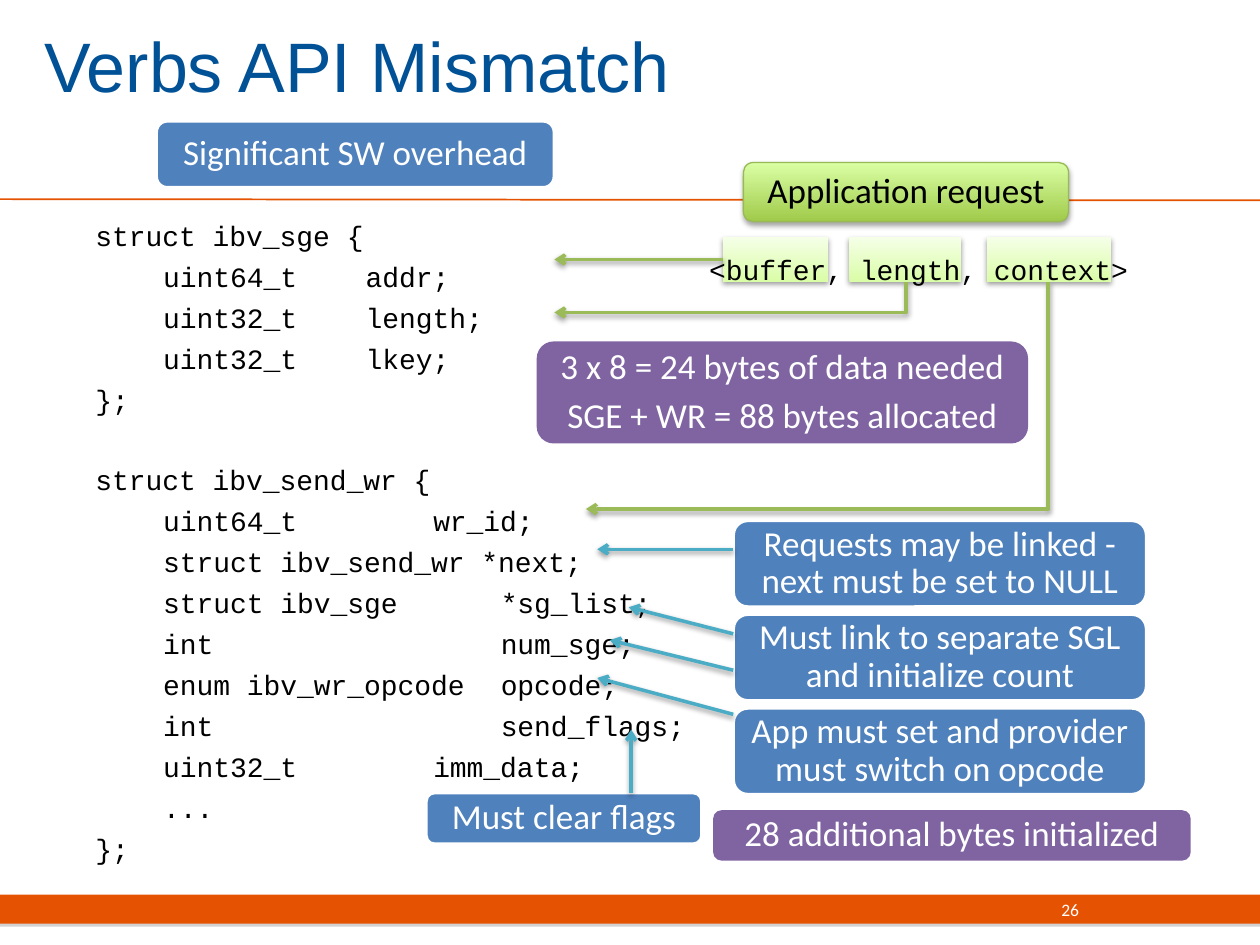
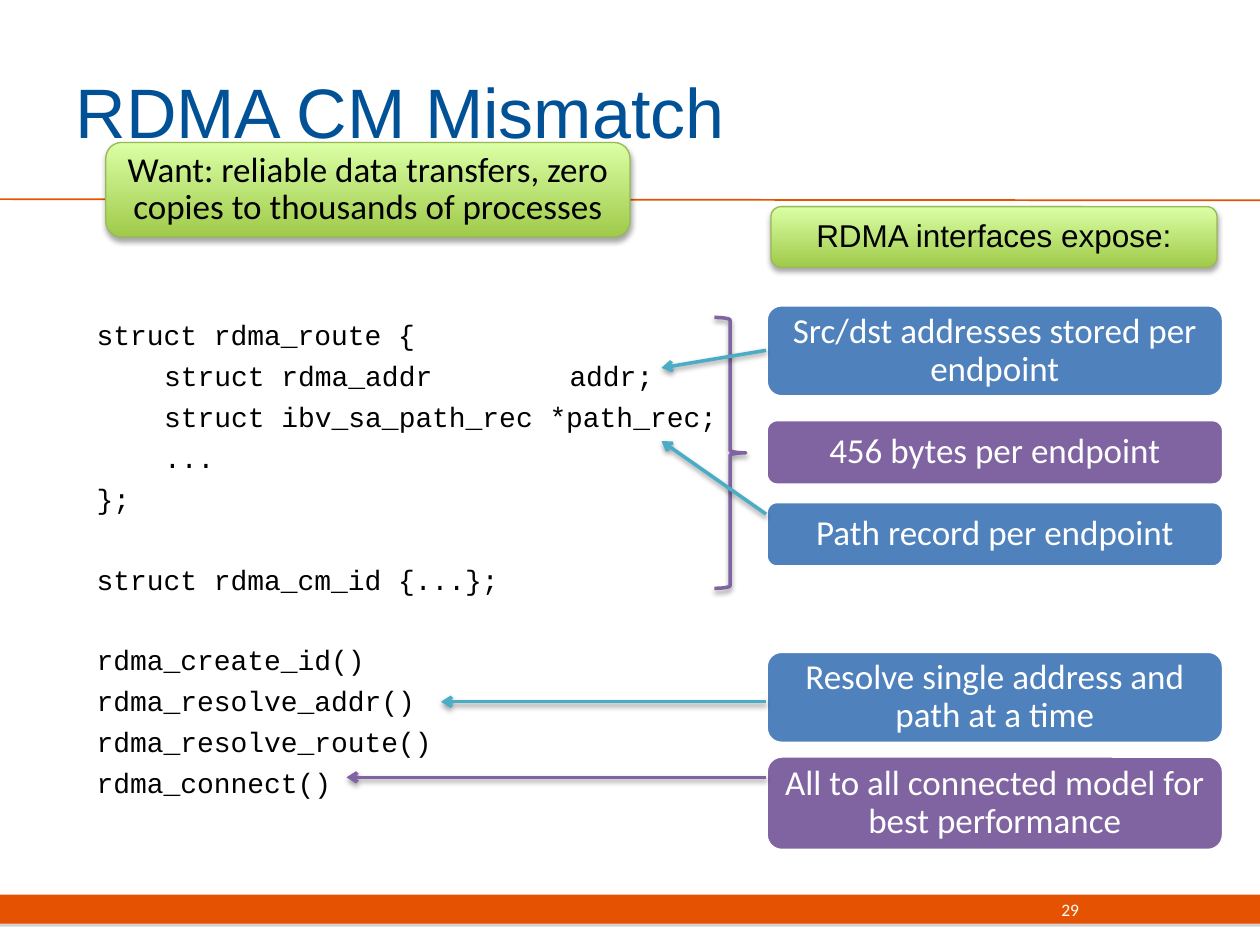
from dataclasses import dataclass
from typing import Any, Optional

from lxml import etree
from pptx import Presentation
from pptx.dml.color import RGBColor
from pptx.enum import shapes, text
from pptx.oxml import ns
from pptx.util import Pt

# Colours
ORANGE = RGBColor(0xE5, 0x53, 0x02)
TITLE_BLUE = RGBColor(0x00, 0x51, 0x95)
BLUE = RGBColor(0x4F, 0x81, 0xBD)
PURPLE = RGBColor(0x80, 0x64, 0xA2)
TEAL = RGBColor(0x4B, 0xAC, 0xC6)
GREEN = RGBColor(0x9B, 0xBB, 0x59)
GREEN_EDGE = RGBColor(0x98, 0xB9, 0x55)
GREEN_FADE = [RGBColor(0xA0, 0xCA, 0x4A), RGBColor(0xDA, 0xFF, 0xA5)]
PALE_FADE = [RGBColor(0xDA, 0xFD, 0xA7), RGBColor(0xF5, 0xFF, 0xE7)]
BLACK = RGBColor(0, 0, 0)
WHITE = RGBColor(0xFF, 0xFF, 0xFF)

WIDTH, HEIGHT = 720, 540
CODE_TAB = 38.6
CODE_GAP = 4.27
CODE_BLANK_GAP = 26.67

CODE_FONT = {"name": "Courier New", "size": Pt(16), "color": BLACK}
LABEL_FONT = {"name": "Calibri", "size": Pt(20), "color": WHITE}
DARK_FONT = LABEL_FONT | {"color": BLACK}
HEADING_FONT = {"name": "Arial", "size": Pt(18), "color": BLACK}
TITLE_FONT = {"name": "Arial", "size": Pt(40), "color": TITLE_BLUE}
NUMBER_FONT = {"name": "Calibri", "size": Pt(10), "color": WHITE}


@dataclass(frozen=True)
class Shadow:
    color: str
    alpha: int
    blur: float
    distance: float


BAND_SHADOW = Shadow("808080", 35, 0, 1.8)
BOX_SHADOW = Shadow("000000", 35, 3.1, 1.8)
LINE_SHADOW = Shadow("000000", 38, 3.1, 1.6)


@dataclass(frozen=True)
class Box:
    left: float
    top: float
    width: float
    height: float
    lines: tuple[str, ...] = ()
    fill: Any = BLUE
    edge: Optional[RGBColor] = WHITE
    edge_width: float = 2
    font: Any = None
    shadow: Optional[Shadow] = None
    preset: Any = shapes.MSO_SHAPE.ROUNDED_RECTANGLE


@dataclass(frozen=True)
class Arrow:
    start: tuple[float, float]
    end: tuple[float, float]
    color: RGBColor = TEAL
    bent: bool = False


def green_box(*place: float, lines: tuple[str, ...], font: Any = None) -> Box:
    return Box(*place, lines=lines, fill=GREEN_FADE, edge=GREEN_EDGE, edge_width=0.75,
               font=font or DARK_FONT, shadow=BOX_SHADOW)


# Formatting helpers
def apply(target: Any, values: dict) -> None:
    for name, value in values.items():
        if name == "color":
            target.color.rgb = value
        else:
            setattr(target, name, value)


def set_margins(frame: Any, horizontal: float, vertical: float) -> None:
    apply(frame, {"margin_left": Pt(horizontal), "margin_right": Pt(horizontal),
                  "margin_top": Pt(vertical), "margin_bottom": Pt(vertical)})


def cast_shadow(properties: Any, shadow: Optional[Shadow]) -> None:
    effects = properties.find(ns.qn("a:effectLst"))
    if effects is None:
        effects = etree.SubElement(properties, ns.qn("a:effectLst"))
    if shadow:
        outer = etree.SubElement(effects, ns.qn("a:outerShdw"), blurRad=str(Pt(shadow.blur)),
                                 dist=str(Pt(shadow.distance)), dir="5400000", rotWithShape="0")
        color = etree.SubElement(outer, ns.qn("a:srgbClr"), val=shadow.color)
        etree.SubElement(color, ns.qn("a:alpha"), val=str(shadow.alpha * 1000))


def write(frame: Any, lines: tuple[str, ...], font: dict, paragraph_format: dict,
          gap: float = 0) -> None:
    for index, line in enumerate(lines):
        paragraph = frame.add_paragraph() if index else frame.paragraphs[0]
        apply(paragraph, paragraph_format)
        if index:
            paragraph.space_before = Pt(gap)
        run = paragraph.add_run()
        run.text = line
        apply(run.font, font)


def add_text(slide: Any, left: float, top: float, width: float, height: float) -> Any:
    frame = slide.shapes.add_textbox(Pt(left), Pt(top), Pt(width), Pt(height)).text_frame
    frame.word_wrap = True
    set_margins(frame, 7.2, 3.6)
    return frame


# Drawing functions
def draw_box(slide: Any, box: Box) -> None:
    shape = slide.shapes.add_shape(box.preset, Pt(box.left), Pt(box.top),
                                   Pt(box.width), Pt(box.height))
    shape.shadow.inherit = False
    cast_shadow(shape._element.spPr, box.shadow)
    if isinstance(box.fill, list):
        shape.fill.gradient()
        shape.fill.gradient_angle = 90
        for stop, color in zip(shape.fill.gradient_stops, box.fill):
            stop.color.rgb = color
    elif box.fill is None:
        shape.fill.background()
    else:
        shape.fill.solid()
        shape.fill.fore_color.rgb = box.fill
    if box.edge is None:
        shape.line.fill.background()
    else:
        apply(shape.line, {"color": box.edge, "width": Pt(box.edge_width)})
    if box.lines:
        frame = shape.text_frame
        apply(frame, {"word_wrap": True, "vertical_anchor": text.MSO_ANCHOR.MIDDLE})
        set_margins(frame, 6, 6)
        write(frame, box.lines, box.font or LABEL_FONT,
              {"alignment": text.PP_ALIGN.CENTER, "line_spacing": 0.9}, gap=6.3)


def draw_line(slide: Any, start: tuple[float, float], end: tuple[float, float],
              color: RGBColor, width: float, shadow: Optional[Shadow] = None) -> Any:
    connector = slide.shapes.add_connector(shapes.MSO_CONNECTOR.STRAIGHT,
                                           *(Pt(value) for value in (*start, *end)))
    apply(connector.line, {"color": color, "width": Pt(width)})
    cast_shadow(connector._element.spPr, shadow)
    return connector


def draw_arrow(slide: Any, arrow: Arrow) -> None:
    start, end = arrow.start, arrow.end
    if arrow.bent:
        # One elbow, down then left: a frame turned a quarter about its centre
        (x1, y1), (x2, y2) = start, end
        center_x, center_y = (x1 + x2) / 2, (y1 + y2) / 2
        half_width, half_height = (y2 - y1) / 2, (x1 - x2) / 2
        start = (center_x - half_width, center_y - half_height)
        end = (center_x + half_width, center_y + half_height)
    connector = draw_line(slide, start, end, arrow.color, 2, LINE_SHADOW)
    properties = connector._element.spPr
    if arrow.bent:
        properties.find(ns.qn("a:xfrm")).set("rot", "5400000")
        properties.find(ns.qn("a:prstGeom")).set("prst", "bentConnector2")
    etree.SubElement(properties.find(ns.qn("a:ln")), ns.qn("a:tailEnd"), type="arrow")


def draw_code(slide: Any, left: float, top: float, height: float, code: str) -> None:
    """Write code lines; an empty line becomes extra space before the next."""
    frame = add_text(slide, left, top, 648, height)
    lines = code.split("\n")
    write(frame, tuple(line for line in lines if line), CODE_FONT, {}, CODE_GAP)
    after_blank = [not before for before, line in zip([" "] + lines, lines) if line]
    for paragraph, blank in zip(frame.paragraphs, after_blank):
        if blank:
            paragraph.space_before = Pt(CODE_BLANK_GAP)
        tabs = etree.SubElement(paragraph._p.get_or_add_pPr(), ns.qn("a:tabLst"))
        for stop in range(1, 9):
            etree.SubElement(tabs, ns.qn("a:tab"), pos=str(Pt(CODE_TAB * stop)), algn="l")


def start_slide(presentation: Any, title: str, place: tuple[float, ...], number: str) -> Any:
    slide = presentation.slides.add_slide(presentation.slide_layouts[5])
    # Footer band and rule
    draw_box(slide, Box(0, 511.2, WIDTH, 16.6, fill=ORANGE, edge=None, shadow=BAND_SHADOW,
                        preset=shapes.MSO_SHAPE.RECTANGLE))
    draw_line(slide, (0, 113.8), (WIDTH, 114.5), ORANGE, 1)
    # Title
    holder = slide.shapes.title
    apply(holder, dict(zip(("left", "top", "width", "height"), map(Pt, place))))
    apply(holder.text_frame, {"vertical_anchor": text.MSO_ANCHOR.MIDDLE, "word_wrap": True,
                              "auto_size": text.MSO_AUTO_SIZE.NONE})
    write(holder.text_frame, (title,), TITLE_FONT, {"alignment": text.PP_ALIGN.LEFT})
    # Slide number
    frame = add_text(slide, 455.8, 505.4, 167.8, 28.8)
    frame.vertical_anchor = text.MSO_ANCHOR.MIDDLE
    write(frame, (number,), NUMBER_FONT, {"alignment": text.PP_ALIGN.RIGHT})
    return slide


VERBS_CODE = """struct ibv_sge {
\tuint64_t\t\taddr;
\tuint32_t\t\tlength;
\tuint32_t\t\tlkey;
};

struct ibv_send_wr {
\tuint64_t\t\t\twr_id;
\tstruct ibv_send_wr *next;
\tstruct ibv_sge\t\t*sg_list;
\tint\t\t\t\t\tnum_sge;
\tenum ibv_wr_opcode\topcode;
\tint\t\t\t\t\tsend_flags;
\tuint32_t\t\t\timm_data;
\t...
};"""

ROUTE_CODE = """struct rdma_route {
\tstruct rdma_addr\t\t\taddr;
\tstruct ibv_sa_path_rec *path_rec;
\t...
};

struct rdma_cm_id {...};

rdma_create_id()
rdma_resolve_addr()
rdma_resolve_route()
rdma_connect()"""


def build_verbs_slide(presentation: Any) -> None:
    slide = start_slide(presentation, "Verbs API Mismatch", (18, 18.7, 695.5, 36), "26")
    draw_code(slide, 47.5, 121.2, 365.8, VERBS_CODE)
    # Application request and its three fields
    for left, width in ((413.3, 59.8), (485.3, 64.1), (563.8, 71.3)):
        draw_box(slide, Box(left, 135.7, width, 25.2, fill=PALE_FADE, edge=None,
                            shadow=LINE_SHADOW, preset=shapes.MSO_SHAPE.RECTANGLE))
    draw_box(slide, green_box(424.8, 92.9, 185.8, 33.8, lines=("Application request",)))
    write(add_text(slide, 365.8, 140.5, 318.2, 33.8), ("<buffer, length, context>",),
          CODE_FONT, {"alignment": text.PP_ALIGN.CENTER})
    # Remarks
    remarks = ("Requests may be linked - next must be set to NULL",
               "Must link to separate SGL and initialize count",
               "App must set and provider must switch on opcode")
    for index, remark in enumerate(remarks):
        draw_box(slide, Box(419, 297.4 + 53.6 * index, 236.2, 49.5, (remark,)))
    for box in (
        Box(306.7, 195.1, 280.8, 58.3, ("3 x 8 = 24 bytes of data needed",
                                        "SGE + WR = 88 bytes allocated"), PURPLE, None),
        Box(243.4, 452.9, 157.7, 29.5, ("Must clear flags",)),
        Box(407.5, 463, 272.9, 28.8, ("28 additional bytes initialized",), PURPLE, None),
        Box(89.3, 69.1, 227.5, 38.2, ("Significant SW overhead",)),
    ):
        draw_box(slide, box)
    for arrow in (
        Arrow((413.3, 148.3), (316.8, 148.3), GREEN),
        Arrow((517.7, 161.3), (316.8, 178.6), GREEN, bent=True),
        Arrow((599, 161.3), (334.8, 290.9), GREEN, bent=True),
        Arrow((419, 313.9), (341.3, 313.9)),
        Arrow((419, 362.2), (359.3, 347)),
        Arrow((419, 383), (348.5, 365.8)),
        Arrow((419, 408.2), (341.3, 387.4)),
        Arrow((360.7, 452.9), (360.7, 416.9)),
    ):
        draw_arrow(slide, arrow)


def build_cm_slide(presentation: Any) -> None:
    slide = start_slide(presentation, "RDMA CM Mismatch", (36, 18, 588.2, 90), "29")
    draw_code(slide, 48.2, 178.1, 324, ROUTE_CODE)
    # Column of remarks
    for top, height, remark, fill in (
        (174.2, 52.6, "Src/dst addresses stored per endpoint", BLUE),
        (239.8, 37.4, "456 bytes per endpoint", PURPLE),
        (286.6, 37.4, "Path record per endpoint", BLUE),
        (372.2, 52.6, "Resolve single address and path at a time", BLUE),
        (432, 54, "All to all connected model for best performance", PURPLE),
    ):
        draw_box(slide, Box(437.8, top, 261.4, height, (remark,), fill))
    # Brace and arrows
    draw_box(slide, Box(408.2, 181.4, 18, 154.8, fill=None, edge=PURPLE, shadow=LINE_SHADOW,
                        preset=shapes.MSO_SHAPE.RIGHT_BRACE))
    for start_y, end, color in ((200.2, (378, 210.2), TEAL), (293.8, (378, 252), TEAL),
                                (401, (252, 401), TEAL), (444.2, (198, 444.2), PURPLE)):
        draw_arrow(slide, Arrow((437.8, start_y), end, color))
    # Green headings
    draw_box(slide, green_box(60.5, 81.4, 299.5, 54, lines=(
        "Want: reliable data transfers, zero copies to thousands of processes",)))
    draw_box(slide, green_box(440.6, 118.1, 254.9, 34.6, lines=("RDMA interfaces expose:",),
                              font=HEADING_FONT))


def main() -> None:
    presentation = Presentation()
    presentation.slide_width, presentation.slide_height = Pt(WIDTH), Pt(HEIGHT)
    build_verbs_slide(presentation)
    build_cm_slide(presentation)
    presentation.save("out.pptx")


if __name__ == "__main__":
    main()
